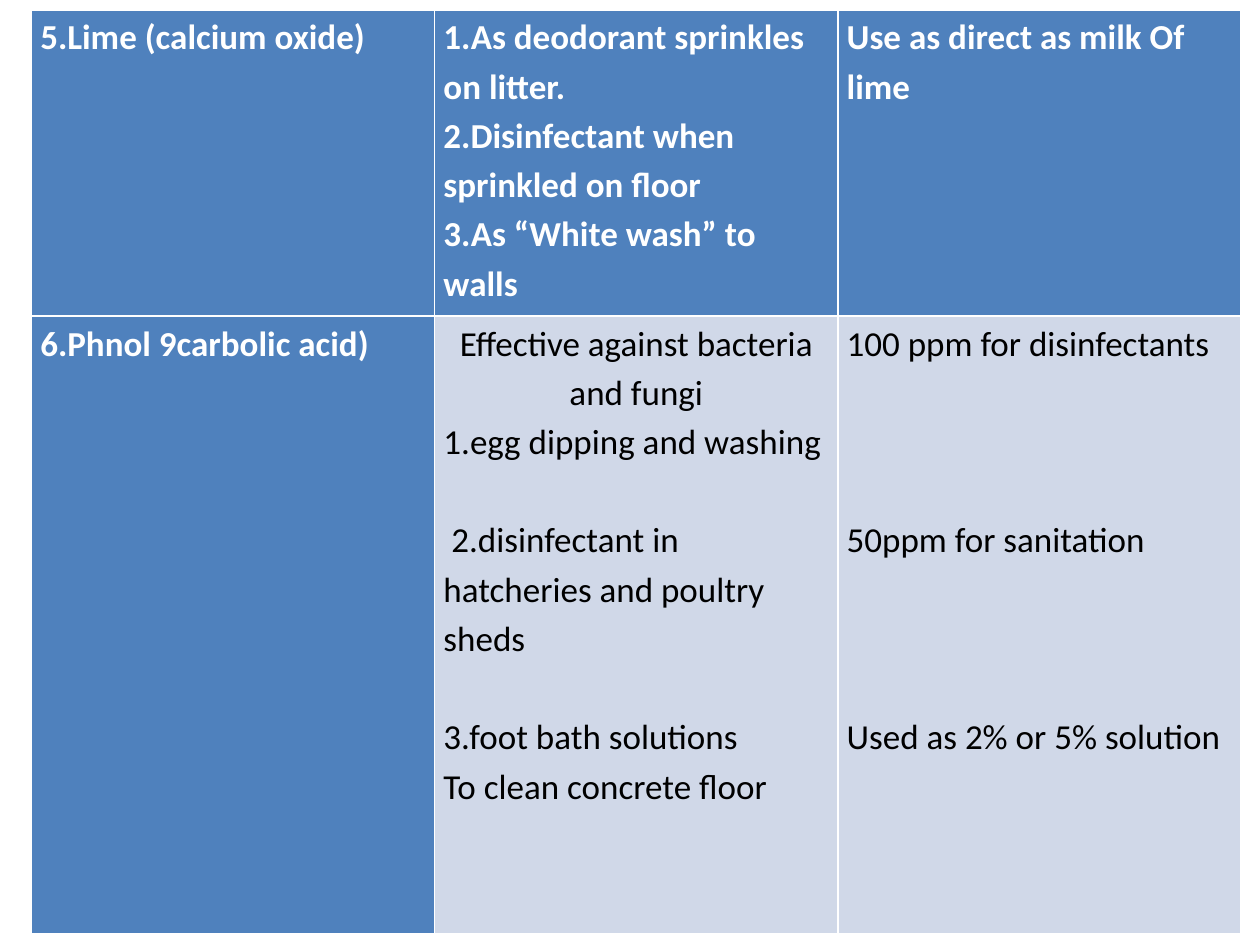
import dataclasses
import typing

import pptx
import pptx.dml.color
import pptx.enum.text
import pptx.util

Inches = pptx.util.Inches
Pt = pptx.util.Pt
RGB = pptx.dml.color.RGBColor
ALIGN = pptx.enum.text.PP_ALIGN


@dataclasses.dataclass(frozen=True)
class Theme:
    font: str = "Calibri"
    size: float = 20
    lead: float = 1.15
    line: float = 28.1  # points taken by one line of text
    blue: str = "4F81BD"
    pale: str = "D0D8E8"
    white: str = "FFFFFF"
    black: str = "000000"


@dataclasses.dataclass(frozen=True)
class Para:
    text: str
    gap: int = 0  # lines left free above
    align: typing.Any = ALIGN.LEFT


THEME = Theme()
WIDTHS = [3.2] * 3
HEIGHTS = [2.43, 4.9]

# Each row: agent, use, dose
ROWS = [
    [
        [Para("5.Lime (calcium oxide)")],
        [
            Para("1.As deodorant sprinkles on litter."),
            Para("2.Disinfectant when sprinkled on floor"),
            Para("3.As “White wash” to walls"),
        ],
        [Para("Use as direct as milk Of lime")],
    ],
    [
        [Para("6.Phnol 9carbolic acid)")],
        [
            Para("Effective against bacteria and fungi", align=ALIGN.CENTER),
            Para("1.egg dipping and washing"),
            Para(" 2.disinfectant in hatcheries and poultry sheds", gap=1),
            Para("3.foot bath solutions", gap=1),
            Para("To clean concrete floor"),
        ],
        [
            Para("100 ppm for disinfectants"),
            Para("50ppm for sanitation", gap=3),
            Para("Used as 2% or 5% solution", gap=3),
        ],
    ],
]


def put(item: typing.Any, form: dict) -> None:
    """Set each named attribute on the item."""
    for name, value in form.items():
        setattr(item, name, value)


def fill_cell(cell: typing.Any, paras: list[Para], head: bool) -> None:
    """Colour one cell and write its paragraphs."""
    put(cell, {
        "margin_left": Inches(0.07), "margin_right": Inches(0.07),
        "margin_top": 0, "margin_bottom": 0,
    })
    cell.fill.solid()
    cell.fill.fore_color.rgb = RGB.from_string(THEME.blue if head else THEME.pale)
    ink = RGB.from_string(THEME.white if head else THEME.black)
    frame = cell.text_frame
    for n, para in enumerate(paras):
        block = frame.add_paragraph() if n else frame.paragraphs[0]
        put(block, {
            "alignment": para.align,
            "line_spacing": THEME.lead,
            "space_before": Pt(para.gap * THEME.line),
        })
        run = block.add_run()
        run.text = para.text
        put(run.font, {"name": THEME.font, "size": Pt(THEME.size), "bold": head})
        run.font.color.rgb = ink


def add_grid(slide: typing.Any) -> None:
    """Draw the table; its style gives the white rules."""
    table = slide.shapes.add_table(
        len(HEIGHTS), len(WIDTHS), Inches(0.25), Inches(0.08),
        Inches(sum(WIDTHS)), Inches(sum(HEIGHTS)),
    ).table
    put(table, {"first_row": True, "first_col": True, "horz_banding": True})
    for col, width in zip(table.columns, WIDTHS):
        col.width = Inches(width)
    for row, height in zip(table.rows, HEIGHTS):
        row.height = Inches(height)
    for r, row in enumerate(ROWS):
        for c, paras in enumerate(row):
            fill_cell(table.cell(r, c), paras, head=r == 0 or c == 0)


def main() -> None:
    deck = pptx.Presentation()
    put(deck, {"slide_width": Inches(10), "slide_height": Inches(7.5)})
    # The slide has no title, so the blank layout fits
    add_grid(deck.slides.add_slide(deck.slide_layouts[6]))
    deck.save("out.pptx")


if __name__ == "__main__":
    main()
